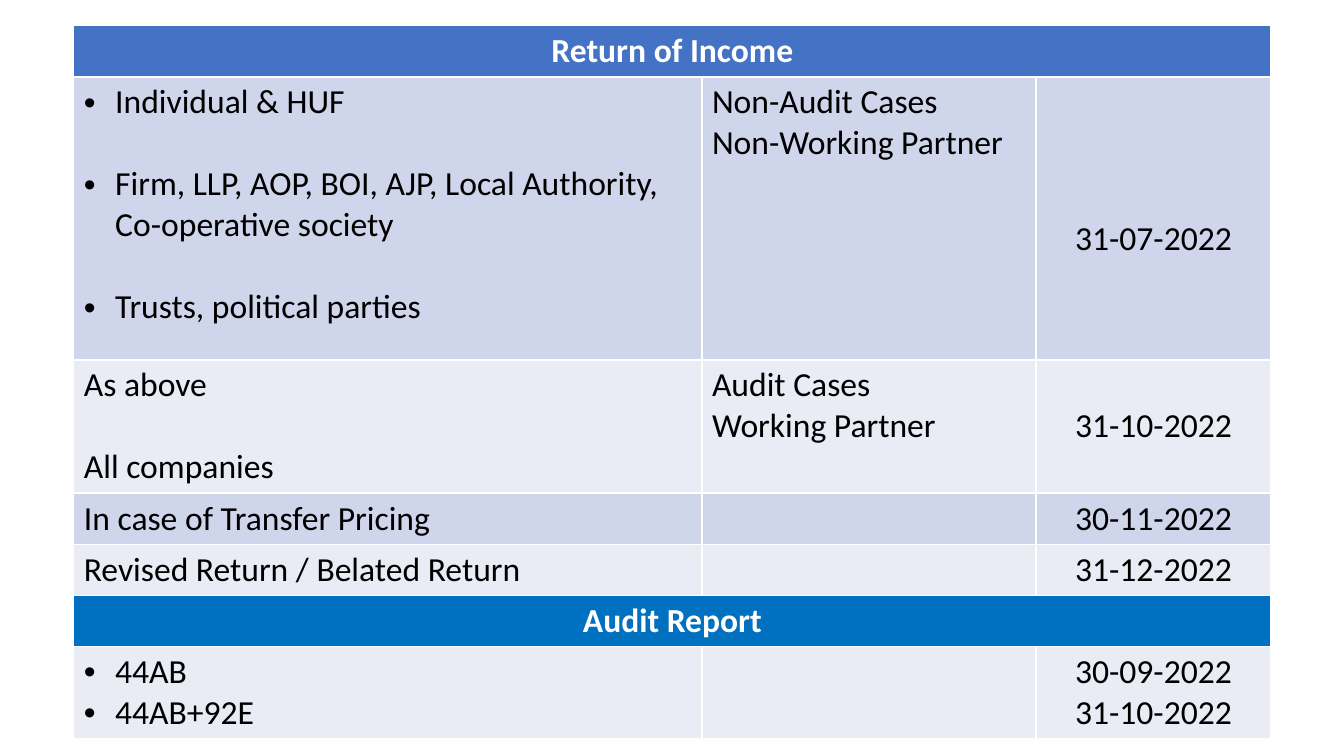
from pptx import Presentation
from pptx.dml.color import RGBColor
from pptx.enum.text import MSO_ANCHOR as ANCHOR, PP_ALIGN as ALIGN
from pptx.oxml.ns import qn
from pptx.util import Cm, Pt
from lxml import etree

WHITE = RGBColor(0xFF, 0xFF, 0xFF)
BLACK = RGBColor(0x00, 0x00, 0x00)
BLUE = RGBColor(0x44, 0x72, 0xC4)
BRIGHT_BLUE = RGBColor(0x00, 0x70, 0xC0)
BAND_DARK = RGBColor(0xCF, 0xD5, 0xEA)
BAND_LIGHT = RGBColor(0xE9, 0xEB, 0xF5)
LINE = Pt(29.3)  # height of one line of 24 pt text
HEADER = {"size": Pt(24), "name": "Calibri", "bold": True}
BODY = {"size": Pt(24), "name": "Calibri", "bold": False}


def fill_cell(cell, lines, color, fmt, align=ALIGN.LEFT, gap=0, bullets=False):
    for i, line in enumerate(lines):
        tf = cell.text_frame
        p = tf.paragraphs[0] if i == 0 else tf.add_paragraph()
        p.alignment = align
        p.space_before = gap if i else 0
        r = p.add_run()
        r.text = line
        for key, value in fmt.items():
            setattr(r.font, key, value)
        r.font.color.rgb = color
        if bullets:
            pPr = p._p.get_or_add_pPr()
            pPr.set("marL", str(Cm(0.79)))
            pPr.set("indent", str(-Cm(0.79)))
            etree.SubElement(pPr, qn("a:buFont")).set("typeface", "Arial")
            etree.SubElement(pPr, qn("a:buChar")).set("char", "•")


# Slide
prs = Presentation()
prs.slide_width, prs.slide_height = Cm(33.87), Cm(19.05)
s = prs.slides.add_slide(prs.slide_layouts[6])

# Rows: height, fill, cases, kind, dates, gap between cases, bulleted
rows = [
    (1.29, BLUE, ["Return of Income"], None, None, 0, False),
    (7.13, BAND_DARK,
     ["Individual & HUF",
      "Firm, LLP, AOP, BOI, AJP, Local Authority, Co-operative society",
      "Trusts, political parties"],
     ["Non-Audit Cases", "Non-Working Partner"], ["31-07-2022"], LINE, True),
    (3.35, BAND_LIGHT, ["As above", "All companies"],
     ["Audit Cases", "Working Partner"], ["31-10-2022"], LINE, False),
    (1.29, BAND_DARK, ["In case of Transfer Pricing"], [], ["30-11-2022"], 0, False),
    (1.29, BAND_LIGHT, ["Revised Return / Belated Return"], [], ["31-12-2022"], 0, False),
    (1.29, BRIGHT_BLUE, ["Audit Report"], None, None, 0, False),
    (2.32, BAND_LIGHT, ["44AB", "44AB+92E"], [], ["30-09-2022", "31-10-2022"], 0, True),
]

# Table
widths = [15.83, 8.42, 5.92]
height = sum(row[0] for row in rows)
table = s.shapes.add_table(len(rows), len(widths), Cm(1.86), Cm(0.65),
                           Cm(sum(widths)), Cm(height)).table
for col, width in zip(table.columns, widths):
    col.width = Cm(width)

for i, (row_height, fill, cases, kind, dates, gap, bulleted) in enumerate(rows):
    table.rows[i].height = Cm(row_height)
    first, middle, last = table.rows[i].cells
    for cell in (first, middle, last):
        cell.fill.solid()
        cell.fill.fore_color.rgb = fill
    # Section header across all columns
    if dates is None:
        first.merge(last)
        fill_cell(first, cases, WHITE, HEADER, ALIGN.CENTER)
        continue
    fill_cell(first, cases, BLACK, BODY, gap=gap, bullets=bulleted)
    fill_cell(middle, kind, BLACK, BODY)
    fill_cell(last, dates, BLACK, BODY, ALIGN.CENTER)
    if kind:
        last.vertical_anchor = ANCHOR.MIDDLE

# First date sits one half line below the middle
table.cell(1, 2).margin_top = Cm(0.13) + LINE

prs.save("out.pptx")
